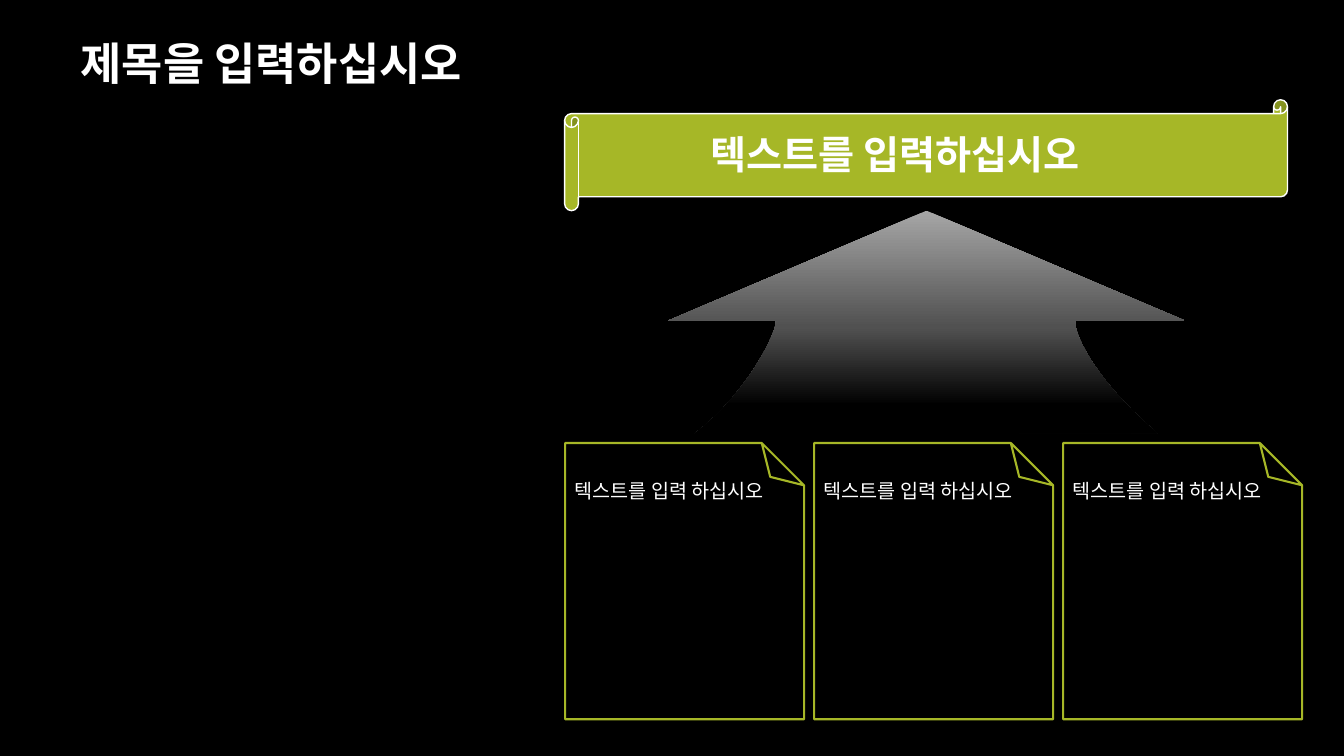
from copy import deepcopy

from lxml.etree import SubElement
from pptx import Presentation
from pptx.dml.color import RGBColor
from pptx.enum.shapes import MSO_SHAPE
from pptx.enum.text import MSO_ANCHOR, MSO_AUTO_SIZE, PP_ALIGN
from pptx.oxml.ns import qn
from pptx.util import Inches, Pt

FONT = "Calibri"
BLACK, WHITE, GREEN = "000000", "FFFFFF", "A6B727"


def color(hex_text):
    return RGBColor.from_string(hex_text)


def place(shape, left, top, width, height):
    shape.left, shape.top = Inches(left), Inches(top)
    shape.width, shape.height = Inches(width), Inches(height)


def add_run(para, text, size, bold=False):
    span = para.add_run()
    span.text = text
    span.font.name = FONT
    span.font.size = Pt(size)
    span.font.bold = bold
    span.font.color.rgb = color(WHITE)


def add_label(shapes, text, area, size, bold=False, wrap=True):
    box = shapes.add_textbox(*map(Inches, area))
    box.text_frame.word_wrap = wrap
    box.text_frame.auto_size = MSO_AUTO_SIZE.SHAPE_TO_FIT_TEXT
    add_run(box.text_frame.paragraphs[0], text, size, bold)


def add_preset(shapes, kind, area, fill, line, weight):
    shape = shapes.add_shape(kind, *map(Inches, area))
    shape.shadow.inherit = False
    shape.fill.solid()
    shape.fill.fore_color.rgb = color(fill)
    shape.line.color.rgb = color(line)
    shape.line.width = Pt(weight)
    return shape


def set_fold(sheet, share):
    """Size the folded corner; python-pptx lists no adjustment for this preset."""
    geometry = sheet._element.spPr.find(qn("a:prstGeom"))
    guides = geometry.find(qn("a:avLst"))
    if guides is None:
        guides = SubElement(geometry, qn("a:avLst"))
    SubElement(guides, qn("a:gd"), name="adj", fmla=f"val {round(share * 100000)}")


def curve(start, control_1, control_2, end, steps=16):
    """Points along a cubic curve, without its start."""
    points = []
    for step in range(1, steps + 1):
        t = step / steps
        weights = ((1 - t) ** 3, 3 * t * (1 - t) ** 2, 3 * t ** 2 * (1 - t), t ** 3)
        knots = (start, control_1, control_2, end)
        points.append(tuple(sum(w * knot[axis] for w, knot in zip(weights, knots))
                            for axis in (0, 1)))
    return points


def fill_gradient(shape, stops):
    """Fill from top to bottom with (position, colour) stops."""
    shape.fill.gradient()
    shape.fill.gradient_angle = 270
    stop_list = shape._element.spPr.find(".//" + qn("a:gsLst"))
    while len(stop_list) < len(stops):
        stop_list.append(deepcopy(stop_list[0]))
    for stop, (position, hex_text) in zip(shape.fill.gradient_stops, stops):
        stop.position = position
        stop.color.rgb = color(hex_text)


def add_title(page, text):
    title = page.shapes.title
    place(title, 0.7, 0.2, 11.9, 0.9)
    title.text_frame.vertical_anchor = MSO_ANCHOR.MIDDLE
    para = title.text_frame.paragraphs[0]
    para.alignment = PP_ALIGN.LEFT
    para.line_spacing = 0.9
    add_run(para, text, 32, bold=True)


def add_arrow(page):
    start = (6.88, 4.31)
    outline = curve(start, (7.47, 3.86), (7.74, 3.2), (7.69, 3.18))
    outline += [(6.63, 3.18), (9.19, 2.09), (11.75, 3.18), (10.68, 3.18)]
    outline += curve(outline[-1], (10.61, 3.18), (10.76, 3.69), (11.48, 4.3))
    builder = page.shapes.build_freeform(*map(Inches, start))
    builder.add_line_segments([(Inches(x), Inches(y)) for x, y in outline], close=True)
    arrow = builder.convert_to_shape()
    arrow.shadow.inherit = False
    arrow.line.fill.background()
    fill_gradient(arrow, [(0, "A6A6A6"), (0.52, "515151"), (0.87, BLACK)])


def add_banner(page, text):
    shapes = page.shapes.add_group_shape().shapes
    add_preset(shapes, MSO_SHAPE.HORIZONTAL_SCROLL, (5.6, 0.99, 7.17, 1.1),
               GREEN, WHITE, 1)
    add_label(shapes, text, (6.95, 1.24, 4.48, 0.57), 28, bold=True, wrap=False)


def add_note(page, left, text):
    shapes = page.shapes.add_group_shape().shapes
    # The sheet is turned, so its unturned frame sits wider than it shows
    sheet = add_preset(shapes, MSO_SHAPE.FOLDED_CORNER, (left - 0.18, 4.58, 2.74, 2.37),
                       BLACK, GREEN, 1.5)
    set_fold(sheet, 0.177)
    sheet.rotation = 270
    add_label(shapes, text, (left, 4.7, 2.37, 0.34), 14)


def main():
    deck = Presentation()
    deck.slide_width, deck.slide_height = Inches(13.33), Inches(7.5)
    page = deck.slides.add_slide(deck.slide_layouts[5])
    page.background.fill.solid()
    page.background.fill.fore_color.rgb = color(BLACK)

    add_title(page, "제목을 입력하십시오")
    add_arrow(page)
    add_banner(page, "텍스트를 입력하십시오")

    # Three notes in a row
    for column in range(3):
        add_note(page, 5.6 + 2.47 * column, "텍스트를 입력 하십시오")

    deck.save("out.pptx")


if __name__ == "__main__":
    main()
